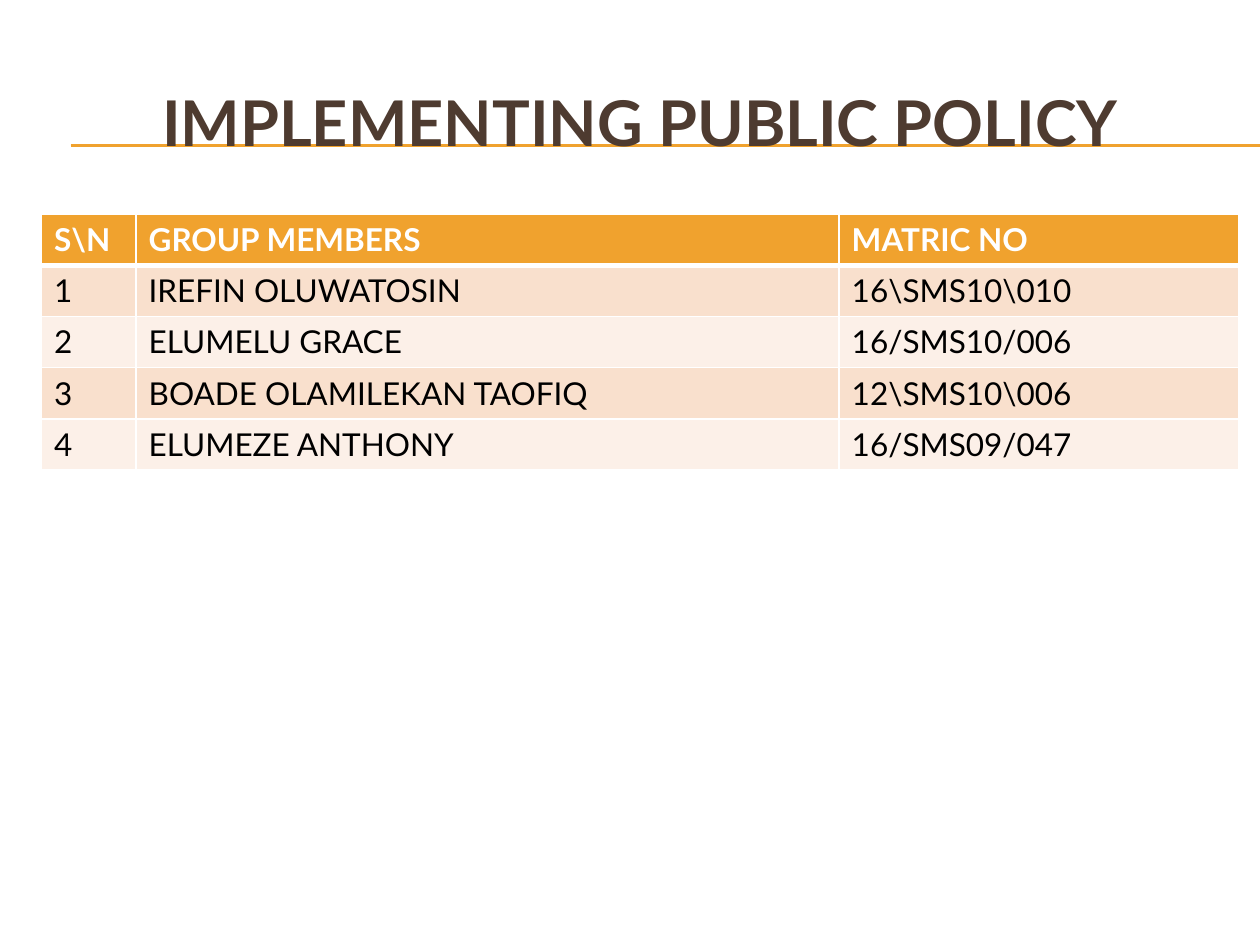
from lxml import etree
from pptx import Presentation
from pptx import util as u
from pptx.dml.color import RGBColor
from pptx.enum import shapes, text
from pptx.oxml import ns

FONT = "Lato"
GOLD, BROWN, WHITE, BLACK = "F0A22E", "4E3B30", "FFFFFF", "000000"
BANDS = ["FCF0E8", "F9E0CD"]
WIDTHS = [0.75, 5.58, 3.17]
ROWS = [
    [r"S\N", "GROUP MEMBERS", "MATRIC NO"],
    ["1", "IREFIN OLUWATOSIN", r"16\SMS10\010"],
    ["2", "ELUMELU GRACE", "16/SMS10/006"],
    ["3", "BOADE OLAMILEKAN TAOFIQ", r"12\SMS10\006"],
    ["4", "ELUMEZE ANTHONY", "16/SMS09/047"],
]


def rgb(code):
    return RGBColor.from_string(code)


def style(par, size, color, bold):
    for run in par.runs:
        font = run.font
        font.name, font.size, font.bold = FONT, u.Pt(size), bold
        font.color.rgb = rgb(color)


def add_rule(slide, y):
    rule = slide.shapes.add_connector(
        shapes.MSO_CONNECTOR.STRAIGHT,
        u.Inches(0.56), u.Inches(y), u.Inches(10), u.Inches(y))
    rule.line.color.rgb = rgb(GOLD)
    rule.line.width = u.Pt(0.75)
    props = rule.element.find(ns.qn("p:spPr"))
    etree.SubElement(props, ns.qn("a:effectLst"))


def set_title(slide, words):
    title = slide.shapes.title
    title.left, title.top = u.Inches(0.33), u.Inches(0.5)
    title.width, title.height = u.Inches(9.5), u.Inches(0.92)
    frame = title.text_frame
    frame.text = words
    frame.word_wrap = True
    frame.vertical_anchor = text.MSO_ANCHOR.MIDDLE
    par = frame.paragraphs[0]
    par.alignment = text.PP_ALIGN.CENTER
    style(par, 36, BROWN, True)
    # Bring the title in front of the rules
    title.element.getparent().append(title.element)


def set_edges(cell, top, bottom):
    """Draw white cell borders; top and bottom are widths in points."""
    props = cell._tc.get_or_add_tcPr()
    sides = [("lnL", 1), ("lnR", 1), ("lnT", top), ("lnB", bottom)]
    for spot, (side, width) in enumerate(sides):
        line = etree.Element(ns.qn("a:" + side), w=str(u.Pt(width)))
        fill = etree.SubElement(line, ns.qn("a:solidFill"))
        etree.SubElement(fill, ns.qn("a:srgbClr"), val=WHITE)
        props.insert(spot, line)


def add_grid(slide):
    grid = slide.shapes.add_table(
        len(ROWS), len(WIDTHS), u.Inches(0.33), u.Inches(1.7),
        u.Inches(sum(WIDTHS)), u.Inches(2.03)).table
    for col, width in zip(grid.columns, WIDTHS):
        col.width = u.Inches(width)
    for i, row in enumerate(ROWS):
        head = i == 0
        for j, words in enumerate(row):
            cell = grid.cell(i, j)
            cell.text = words
            style(cell.text_frame.paragraphs[0], 18,
                  WHITE if head else BLACK, head)
            cell.fill.solid()
            cell.fill.fore_color.rgb = rgb(GOLD if head else BANDS[i % 2])
            set_edges(cell, 3 if i == 1 else 1, 3 if head else 1)


def main():
    deck = Presentation()
    deck.slide_width, deck.slide_height = u.Inches(10), u.Inches(7.5)
    slide = deck.slides.add_slide(deck.slide_layouts[5])
    for y in (1.15, 1.16):
        add_rule(slide, y)
    set_title(slide, "IMPLEMENTING PUBLIC POLICY")
    add_grid(slide)
    deck.save("out.pptx")


if __name__ == "__main__":
    main()
